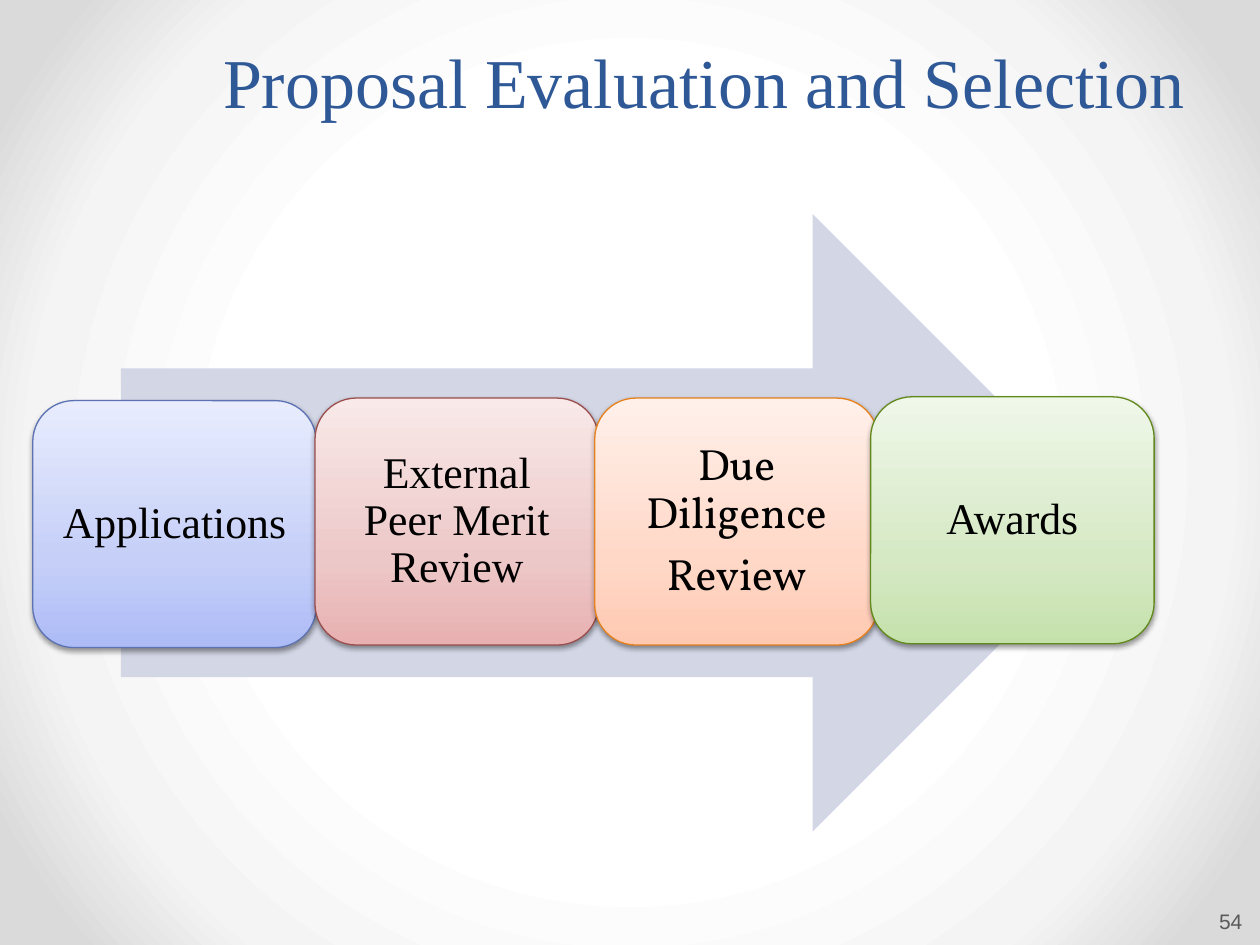
from lxml import etree
from pptx import Presentation
from pptx.dml.color import RGBColor
from pptx.enum.shapes import MSO_SHAPE
from pptx.enum.text import MSO_ANCHOR, PP_ALIGN
from pptx.oxml.ns import qn
from pptx.util import Inches, Pt

ARROW, ROUNDED = MSO_SHAPE.RIGHT_ARROW, MSO_SHAPE.ROUNDED_RECTANGLE
TOP, MIDDLE, BOTTOM = MSO_ANCHOR.TOP, MSO_ANCHOR.MIDDLE, MSO_ANCHOR.BOTTOM
LEFT, CENTER, RIGHT = PP_ALIGN.LEFT, PP_ALIGN.CENTER, PP_ALIGN.RIGHT
SERIF = "Times New Roman"
STEP_WIDTH, STEP_HEIGHT = 2.25, 1.96

# label lines, font, left and top within the arrow's box, gradient, outline
STEPS = [
    (["Applications"], SERIF, -0.70, 1.48, ("ADBBF6", "C5CFF8", "E8ECFD"), "5C72B2"),
    (["External Peer Merit Review"], SERIF, 1.54, 1.46, ("E8B0B0", "EDC8C8", "F9E9E9"), "9A4E4E"),
    (["Due Diligence", "Review"], "Vollkorn", 3.76, 1.46, ("FFC9B1", "FFD8C8", "FFF0EA"), "E6811C"),
    (["Awards"], SERIF, 5.95, 1.45, ("C5E1AB", "D6E9C5", "EFF7E9"), "62891C"),
]


def color(hex_value):
    return RGBColor.from_string(hex_value)


def inches(*lengths):
    return [Inches(length) for length in lengths]


def add_child(parent, tag, **attributes):
    child = etree.SubElement(parent, qn(tag))
    for key, value in attributes.items():
        child.set(key, str(value))
    return child


def set_stops(gradient, stops):
    """Replace the stops of a gradient with (percent, colour) pairs."""
    stop_list = gradient.find(qn("a:gsLst"))
    for old_stop in list(stop_list):
        stop_list.remove(old_stop)
    for percent, hex_value in stops:
        stop = add_child(stop_list, "a:gs", pos=percent * 1000)
        add_child(stop, "a:srgbClr", val=hex_value)


def add_soft_shadow(shape):
    shape.shadow.inherit = False
    effects = shape._element.spPr.find(qn("a:effectLst"))
    shadow = add_child(effects, "a:outerShdw", blurRad=Pt(3.1), dist=Pt(1.6),
                       dir=90 * 60000, rotWithShape=0)
    add_child(add_child(shadow, "a:srgbClr", val="000000"), "a:alpha", val=38000)


def write(frame, lines, font, size, hex_value, align, anchor, margins,
          line_spacing=None, space_after=None):
    frame.word_wrap = True
    frame.vertical_anchor = anchor
    (frame.margin_left, frame.margin_top,
     frame.margin_right, frame.margin_bottom) = inches(*margins)
    frame.text = "\n".join(lines)
    for paragraph in frame.paragraphs:
        paragraph.alignment = align
        paragraph.line_spacing = line_spacing
        paragraph.space_after = space_after
        paragraph.font.name = font
        paragraph.font.size = Pt(size)
        paragraph.font.color.rgb = color(hex_value)


def paint_background(slide):
    slide.background.fill.gradient()
    gradient = slide._element.find(".//" + qn("p:bgPr")).find(qn("a:gradFill"))
    set_stops(gradient, [(50, "FFFFFF"), (76, "F4F4F4"), (92, "DADADA")])
    gradient.remove(gradient.find(qn("a:lin")))
    circle = add_child(gradient, "a:path", path="circle")
    add_child(circle, "a:fillToRect", l=50000, t=50000, r=50000, b=50000)


def place_title(slide, left, top, width, height):
    title = slide.shapes.title
    title.left, title.top, title.width, title.height = inches(left, top, width, height)
    write(title.text_frame, ["Proposal Evaluation and Selection"], SERIF, 40,
          "2F5897", LEFT, TOP, (0.1, 0.05, 0.1, 0.05), line_spacing=0.9)


def add_step(slide, left, top, lines, font, shades, outline):
    step = slide.shapes.add_shape(ROUNDED, *inches(left, top, STEP_WIDTH, STEP_HEIGHT))
    step.fill.gradient()
    step.fill.gradient_angle = 90
    set_stops(step._element.spPr.find(qn("a:gradFill")), zip((0, 35, 100), shades))
    step.line.color.rgb = color(outline)
    step.line.width = Pt(0.75)
    add_soft_shadow(step)
    write(step.text_frame, lines, font, 25, "000000", CENTER, MIDDLE,
          (0.1, 0.1, 0.1, 0.1), line_spacing=0.9, space_after=Pt(8.75))


def add_process(slide, left, top, width, height):
    """Draw the arrow in the box, with the steps placed relative to it."""
    arrow = slide.shapes.add_shape(ARROW, *inches(left, top, width, height))
    arrow.shadow.inherit = False
    arrow.fill.solid()
    arrow.fill.fore_color.rgb = color("D2D6E5")
    arrow.line.fill.background()
    for lines, font, dx, dy, shades, outline in STEPS:
        add_step(slide, left + dx, top + dy, lines, font, shades, outline)


def add_page_number(slide, left, top, width, height):
    number = slide.shapes.add_textbox(*inches(left, top, width, height))
    write(number.text_frame, ["54"], "Arial", 12, "595959", RIGHT, BOTTOM,
          (0.03, 0.05, 0.05, 0.05))


def main():
    deck = Presentation()
    deck.slide_width, deck.slide_height = inches(10, 7.5)
    slide = deck.slides.add_slide(deck.slide_layouts[5])
    paint_background(slide)
    place_title(slide, 1.67, 0.33, 8.52, 0.91)
    add_page_number(slide, 9.3, 7.06, 0.61, 0.4)
    add_process(slide, 0.96, 1.7, 7.94, 4.9)
    deck.save("out.pptx")


if __name__ == "__main__":
    main()
